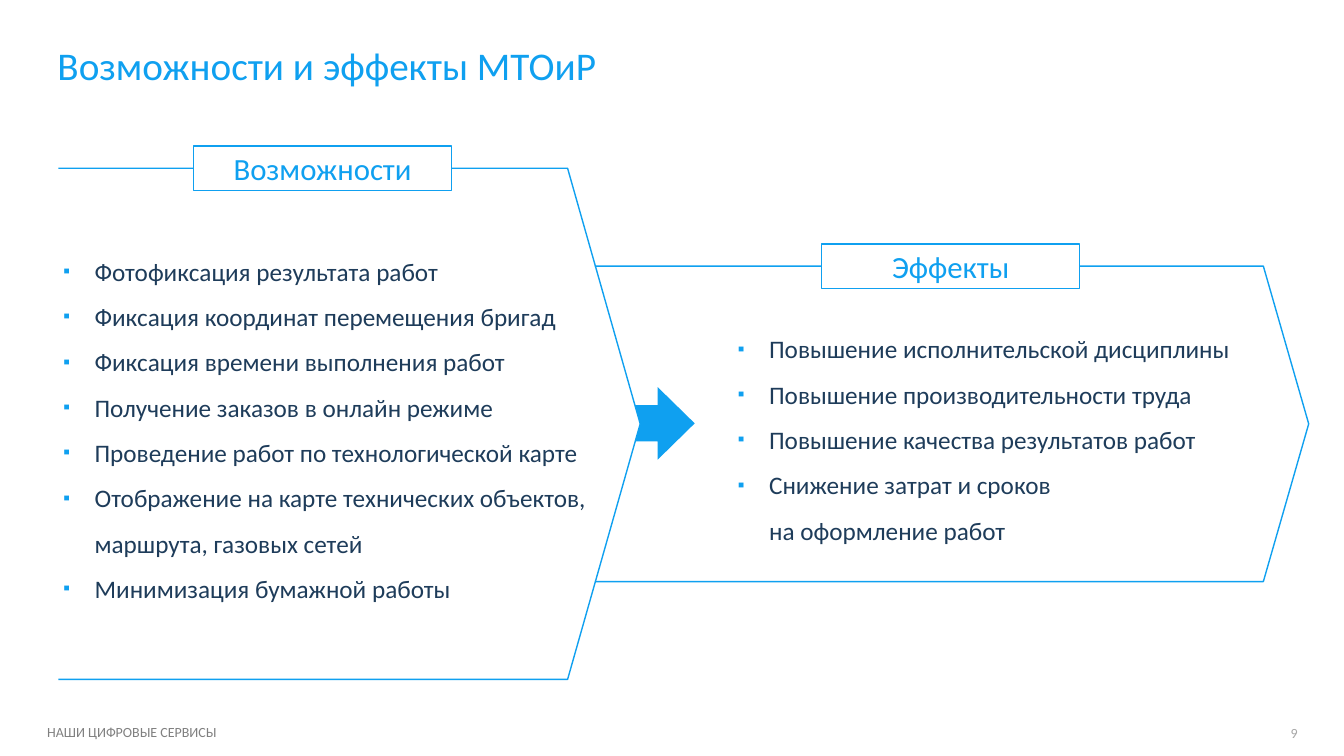
from collections import namedtuple

from lxml import etree
from pptx import Presentation
from pptx.dml.color import RGBColor
from pptx.enum.shapes import MSO_SHAPE
from pptx.enum.text import MSO_ANCHOR, MSO_AUTO_SIZE, PP_ALIGN
from pptx.oxml.ns import qn
from pptx.util import Inches, Pt

LEFT, CENTER, RIGHT = PP_ALIGN.LEFT, PP_ALIGN.CENTER, PP_ALIGN.RIGHT
TOP, MIDDLE = MSO_ANCHOR.TOP, MSO_ANCHOR.MIDDLE
NO_AUTOFIT = MSO_AUTO_SIZE.NONE
RECTANGLE, RIGHT_ARROW = MSO_SHAPE.RECTANGLE, MSO_SHAPE.RIGHT_ARROW

COLORS = {"accent": "0FA0F0", "body": "1E3C5A", "footer": "808080",
          "number": "A6A6A6", "white": "FFFFFF"}
FONT = "Calibri"
TAG_WIDTH, TAG_HEIGHT = 2.56, 0.44
BULLET_INDENT = 0.31

Box = namedtuple("Box", "left top width height")

# Each item is a tuple of its lines
CAPABILITIES = [
    ("Фотофиксация результата работ",),
    ("Фиксация координат перемещения бригад",),
    ("Фиксация времени выполнения работ",),
    ("Получение заказов в онлайн режиме",),
    ("Проведение работ по технологической карте",),
    ("Отображение на карте технических объектов,", "маршрута, газовых сетей"),
    ("Минимизация бумажной работы",),
]
EFFECTS = [
    ("Повышение исполнительской дисциплины",),
    ("Повышение производительности труда",),
    ("Повышение качества результатов работ",),
    ("Снижение затрат и сроков", "на оформление работ"),
]


def rgb(name):
    return RGBColor.from_string(COLORS[name])


def inches(box):
    return [Inches(length) for length in box]


def set_frame(frame, anchor, margins=(0.1, 0.05, 0.1, 0.05)):
    sides = ("margin_left", "margin_top", "margin_right", "margin_bottom")
    values = dict(zip(sides, inches(margins)), word_wrap=True,
                  auto_size=NO_AUTOFIT, vertical_anchor=anchor)
    for name, value in values.items():
        setattr(frame, name, value)


def write(paragraph, lines, size, color, align=LEFT):
    paragraph.alignment = align
    for index, line in enumerate(lines):
        if index:
            paragraph.add_line_break()
        run = paragraph.add_run()
        run.text = line
        run.font.color.rgb = rgb(color)
        for name, value in {"name": FONT, "size": Pt(size)}.items():
            setattr(run.font, name, value)


def paint(shape, fill=None, line=None):
    shape.shadow.inherit = False
    if fill:
        shape.fill.solid()
        shape.fill.fore_color.rgb = rgb(fill)
    else:
        shape.fill.background()
    if line:
        shape.line.color.rgb = rgb(line)
        shape.line.width = Pt(1)
    else:
        shape.line.fill.background()


def set_indent(paragraph, left, first=0):
    properties = paragraph._p.get_or_add_pPr()
    properties.set("marL", str(Inches(left)))
    properties.set("indent", str(Inches(first)))
    return properties


def add_bullet(paragraph):
    properties = set_indent(paragraph, BULLET_INDENT, -BULLET_INDENT)
    color = etree.SubElement(properties, qn("a:buClr"))
    etree.SubElement(color, qn("a:srgbClr"), val=COLORS["accent"])
    etree.SubElement(properties, qn("a:buSzPct"), val="75000")
    etree.SubElement(properties, qn("a:buFont"), typeface=FONT)
    etree.SubElement(properties, qn("a:buChar"), char="▪")


def add_title(slide, box, text):
    title = slide.shapes.title
    title.left, title.top, title.width, title.height = inches(box)
    set_frame(title.text_frame, MIDDLE, (0, 0.05, 0, 0.05))
    heading = title.text_frame.paragraphs[0]
    set_indent(heading, 0.2)
    write(heading, [text], 28, "accent")


def add_note(slide, box, text, color, align, anchor, margins):
    note = slide.shapes.add_textbox(*inches(box))
    set_frame(note.text_frame, anchor, margins)
    write(note.text_frame.paragraphs[0], [text], 10, color, align)


def add_flow_arrow(slide, box):
    arrow = slide.shapes.add_shape(RIGHT_ARROW, *inches(box))
    arrow.adjustments[1] = 0.51
    paint(arrow, fill="accent")


def add_panel(slide, box, nose, fill, tag, tag_offset, items, list_box):
    """Pointed outline, tag centred on its top edge, bulleted list."""
    right, bottom = box.left + box.width, box.top + box.height
    shoulder = right - nose

    # Outline, open on the left
    builder = slide.shapes.build_freeform(
        Inches(box.left), Inches(box.top), scale=1.0)
    corners = [(shoulder, box.top), (right, box.top + box.height / 2),
               (shoulder, bottom), (box.left, bottom)]
    builder.add_line_segments([inches(corner) for corner in corners], close=False)
    paint(builder.convert_to_shape(), fill, "accent")

    # Tag
    label = slide.shapes.add_shape(RECTANGLE, *inches(Box(
        box.left + tag_offset, box.top - TAG_HEIGHT / 2, TAG_WIDTH, TAG_HEIGHT)))
    paint(label, "white", "accent")
    set_frame(label.text_frame, MIDDLE)
    write(label.text_frame.paragraphs[0], [tag], 22, "accent", CENTER)

    # List
    bullets = slide.shapes.add_textbox(*inches(list_box._replace(
        left=box.left + list_box.left, top=box.top + list_box.top)))
    frame = bullets.text_frame
    set_frame(frame, TOP)
    for index, lines in enumerate(items):
        paragraph = frame.add_paragraph() if index else frame.paragraphs[0]
        paragraph.line_spacing = 1.5
        add_bullet(paragraph)
        write(paragraph, lines, 18, "body")


def main():
    deck = Presentation()
    deck.slide_width, deck.slide_height = Inches(13.33), Inches(7.5)
    slide = deck.slides.add_slide(deck.slide_layouts[5])

    add_title(slide, Box(0.37, 0.21, 12.6, 0.87), "Возможности и эффекты МТОиР")
    add_flow_arrow(slide, Box(6.14, 3.84, 0.75, 0.72))
    add_panel(slide, Box(0.58, 1.67, 5.77, 5.07), 0.72, "white",
              "Возможности", 1.34, CAPABILITIES, Box(-0.05, 0.67, 5.51, 3.74))
    add_panel(slide, Box(5.9, 2.64, 7.08, 3.13), 0.45, None,
              "Эффекты", 2.25, EFFECTS, Box(1.32, 0.47, 5.2, 2.37))

    # Footer
    add_note(slide, Box(0.37, 7.18, 2.2, 0.17), "НАШИ ЦИФРОВЫЕ СЕРВИСЫ",
             "footer", LEFT, TOP, (0.1, 0, 0, 0))
    add_note(slide, Box(12.34, 7.11, 0.63, 0.32), "9",
             "number", RIGHT, MIDDLE, (0.1, 0.05, 0.1, 0.05))

    deck.save("out.pptx")


if __name__ == "__main__":
    main()
